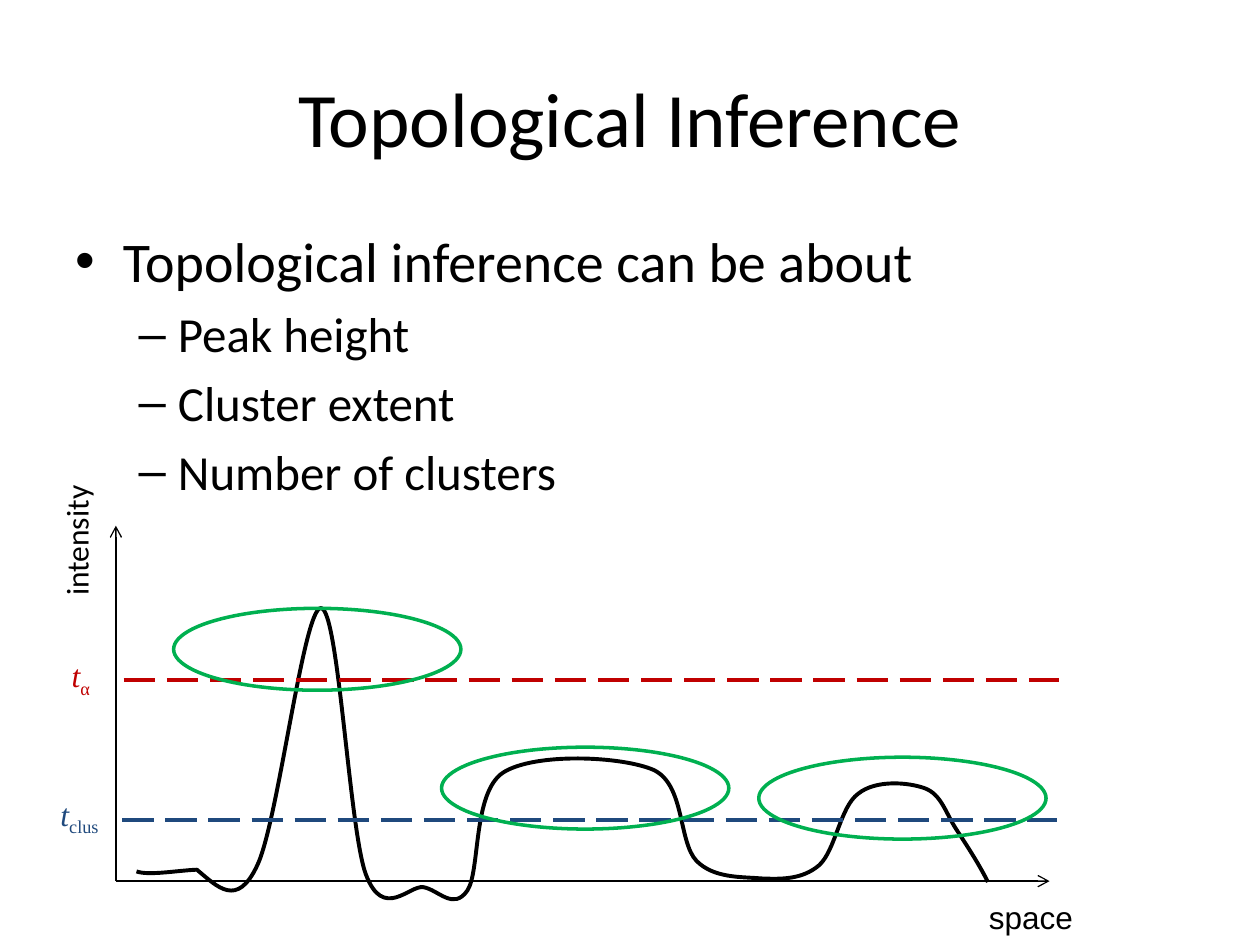
from lxml.etree import SubElement
from pptx import Presentation
from pptx.dml.color import RGBColor
from pptx.enum.dml import MSO_LINE_DASH_STYLE as Dash
from pptx.enum.shapes import MSO_CONNECTOR as Connector, MSO_SHAPE as Shape
from pptx.enum.text import MSO_ANCHOR as Anchor, MSO_AUTO_SIZE as AutoSize, PP_ALIGN as Align
from pptx.oxml.ns import qn
from pptx.util import Pt

BLACK = RGBColor(0, 0, 0)
RED = RGBColor(0xC0, 0, 0)
NAVY = RGBColor(0x1F, 0x49, 0x7D)
GREEN = RGBColor(0, 0xB0, 0x50)

SIGNAL_BOX = (78, 347.5, 486.5, 166.5)
SIGNAL_START = (78, 498)
SIGNAL_CURVES = [
    [(85, 500.5), (101, 497.5), (112.5, 497)],
    [(124.5, 507), (135.5, 519), (147, 494.5)],
    [(159, 469.5), (173.5, 346.5), (183.5, 347.5)],
    [(193.5, 348.5), (199.5, 473.5), (209, 499.5)],
    [(219, 526.5), (234, 505.5), (242, 507)],
    [(250.5, 508.5), (259, 520.5), (267, 509)],
    [(274.5, 498), (270, 453), (287.5, 441.5)],
    [(305.5, 430), (355, 432), (373.5, 440)],
    [(391.5, 448.5), (387.5, 481), (398, 492)],
    [(408, 502), (423.5, 501), (435, 502)],
    [(447, 502.5), (458.5, 502.5), (468, 494.5)],
    [(477.5, 486), (480, 461), (490.5, 453.5)],
    [(500.5, 445.5), (519, 447), (528.5, 450.5)],
    [(538, 454), (540.5, 465), (546.5, 474)],
    [(552, 482.5), (559, 493), (564.5, 504)],
]


def apply(target, values):
    for name, value in values.items():
        setattr(target, name, value)


class SlideWriter:
    label_size = 18
    heavy = 2.25
    outline = 2
    thin = 0.75

    def __init__(self, slide):
        self.slide = slide

    def run(self, paragraph, text, color, **font):
        run = paragraph.add_run()
        run.text = text
        apply(run.font, font)
        run.font.color.rgb = color
        return run

    def placeholder(self, index, box, lines, alignment, anchor):
        holder = self.slide.placeholders[index]
        apply(holder, dict(zip(("left", "top", "width", "height"), map(Pt, box))))
        frame = holder.text_frame
        frame.vertical_anchor = anchor
        for number, (text, level, size) in enumerate(lines):
            paragraph = frame.add_paragraph() if number else frame.paragraphs[0]
            apply(paragraph, {"level": level, "alignment": alignment})
            self.run(paragraph, text, BLACK, name="Calibri", size=Pt(size))

    def label(self, box, text, font, color=BLACK, subscript="", rotation=0):
        label = self.slide.shapes.add_textbox(*map(Pt, box))
        label.rotation = rotation
        apply(label.text_frame, {"word_wrap": False, "auto_size": AutoSize.SHAPE_TO_FIT_TEXT})
        paragraph = label.text_frame.paragraphs[0]
        style = {"name": font, "size": Pt(self.label_size)}
        self.run(paragraph, text, color, italic=bool(subscript), **style)
        if subscript:
            lowered = self.run(paragraph, subscript, color, italic=False, **style)
            lowered.font._element.set("baseline", "-25000")

    def line(self, start, end, color, width, dash=None, arrow=False):
        line = self.slide.shapes.add_connector(Connector.STRAIGHT, *map(Pt, start + end))
        line.line.color.rgb = color
        apply(line.line, {"width": Pt(width), "dash_style": dash})
        if arrow:
            SubElement(line.line._get_or_add_ln(), qn("a:tailEnd"), type="arrow")
        SubElement(line._element.spPr, qn("a:effectLst"))

    def outlined(self, shape, color, width):
        shape.shadow.inherit = False
        shape.fill.background()
        shape.line.color.rgb = color
        shape.line.width = Pt(width)

    def curve(self, box, start, curves):
        left, top, width, height = map(Pt, box)
        builder = self.slide.shapes.build_freeform(left, top)
        builder.add_line_segments([(left + width, top + height)], close=False)
        curve = builder.convert_to_shape()
        contour = next(curve._element.iter(qn("a:path")))
        for segment in list(contour):
            contour.remove(segment)
        steps = [("a:moveTo", [start])] + [("a:cubicBezTo", points) for points in curves]
        for tag, points in steps:
            segment = SubElement(contour, qn(tag))
            for x, y in points:
                SubElement(segment, qn("a:pt"), x=str(Pt(x) - left), y=str(Pt(y) - top))
        self.outlined(curve, BLACK, self.heavy)

    def ellipse(self, left, top):
        ellipse = self.slide.shapes.add_shape(Shape.OVAL, Pt(left), Pt(top), Pt(164.16), Pt(46.8))
        self.outlined(ellipse, GREEN, self.outline)


def main():
    deck = Presentation()
    apply(deck, {"slide_width": Pt(720), "slide_height": Pt(540)})
    writer = SlideWriter(deck.slides.add_slide(deck.slide_layouts[1]))

    writer.placeholder(0, (36, 21.6, 648, 90), [("Topological Inference", 0, 44)],
                       Align.CENTER, Anchor.MIDDLE)
    topics = ["Peak height", "Cluster extent", "Number of clusters"]
    writer.placeholder(1, (36, 126, 648, 356.4),
                       [("Topological inference can be about", 0, 32)]
                       + [(topic, 1, 28) for topic in topics],
                       Align.LEFT, Anchor.TOP)

    writer.curve(SIGNAL_BOX, SIGNAL_START, SIGNAL_CURVES)
    origin = (66.24, 503.5)
    for axis_end in [(599.76, 503.5), (66.24, 300.4)]:
        writer.line(origin, axis_end, BLACK, writer.thin, arrow=True)
    writer.label((558, 509.76, 63.36, 28.8), "space", "Arial")
    writer.label((2.88, 292.5, 81.36, 28.8), "intensity", "Calibri", rotation=270)

    thresholds = [
        (70.7, 388.8, RED, (33.84, 371.52, 27.36, 28.8), "α"),
        (69.84, 468.6, NAVY, (27.5, 450.5, 38.88, 28.8), "clus"),
    ]
    for left, height, color, label_box, subscript in thresholds:
        writer.line((left, height), (left + 534.24, height), color, writer.heavy, Dash.LONG_DASH)
        writer.label(label_box, "t", "Times New Roman", color, subscript)

    for cluster in [(99.2, 347.6), (252.3, 426.96), (433.6, 432.72)]:
        writer.ellipse(*cluster)

    deck.save("out.pptx")


if __name__ == "__main__":
    main()
